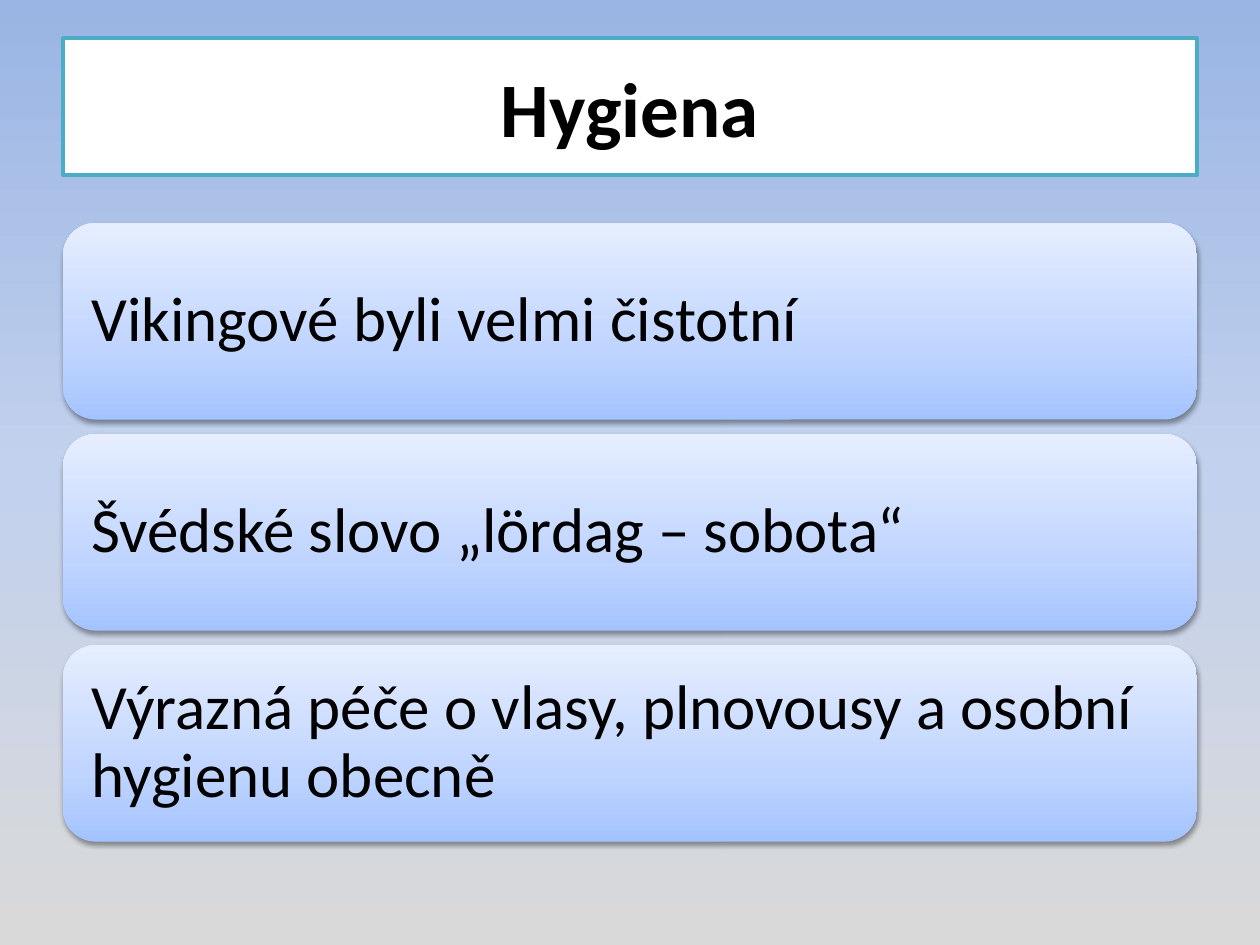
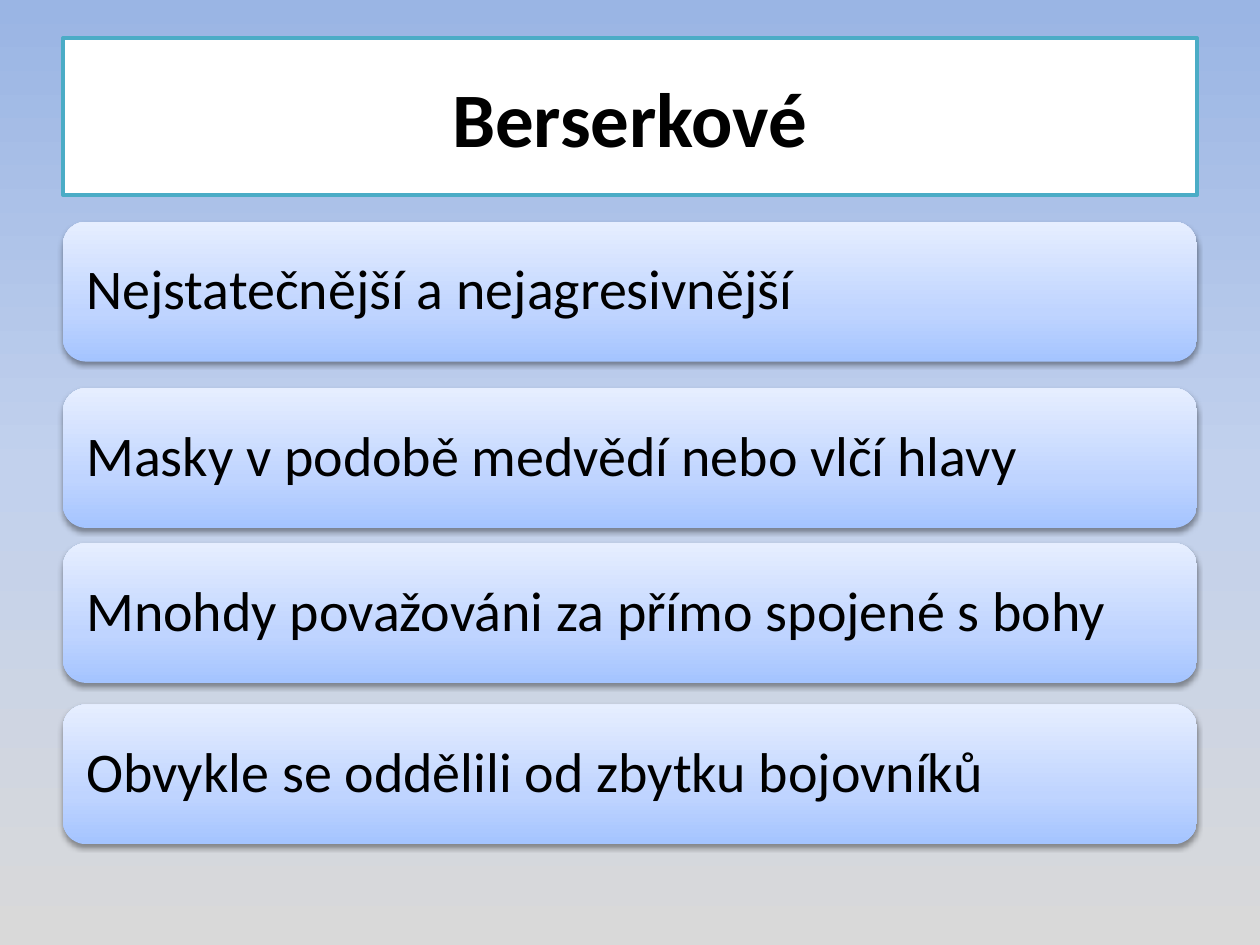
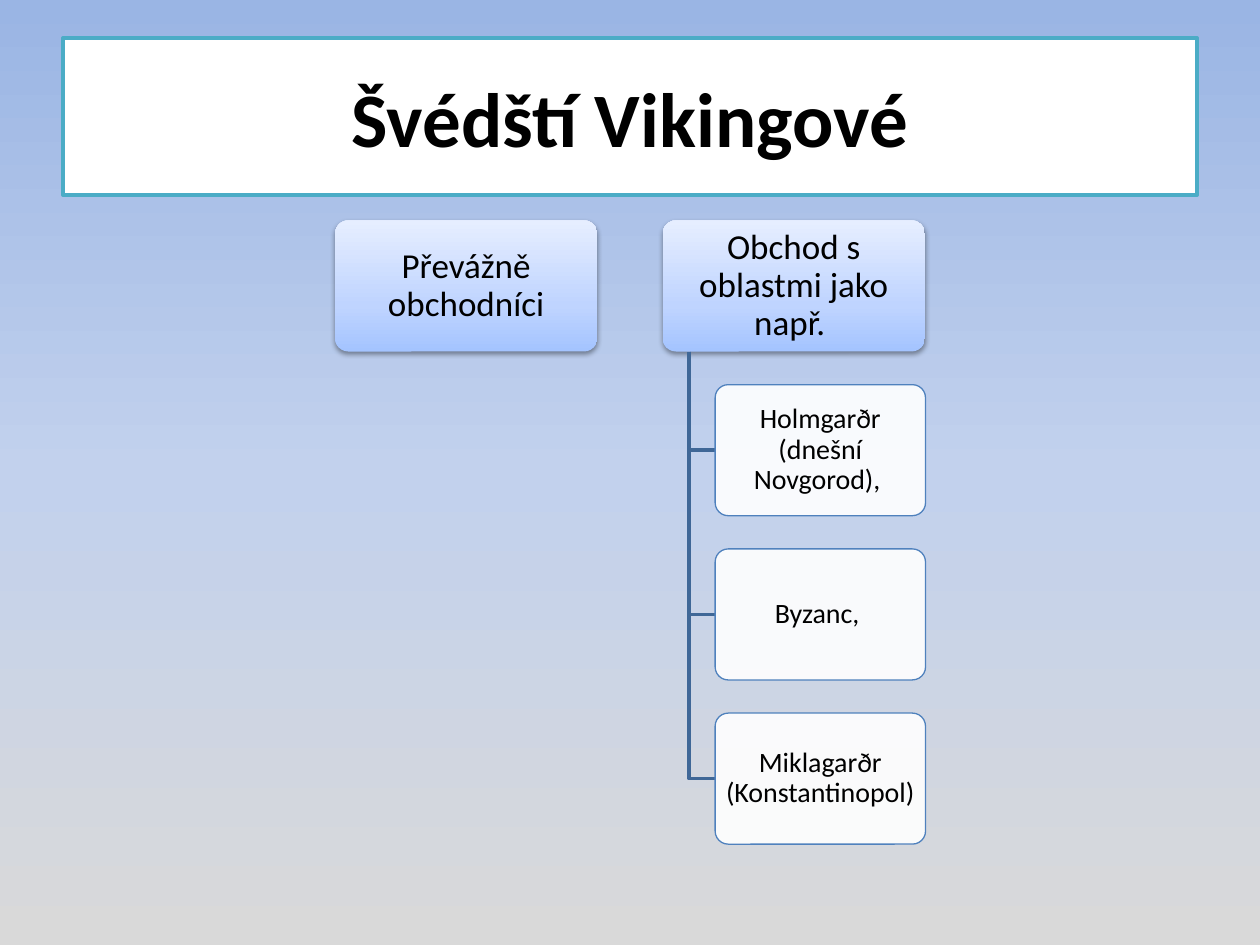
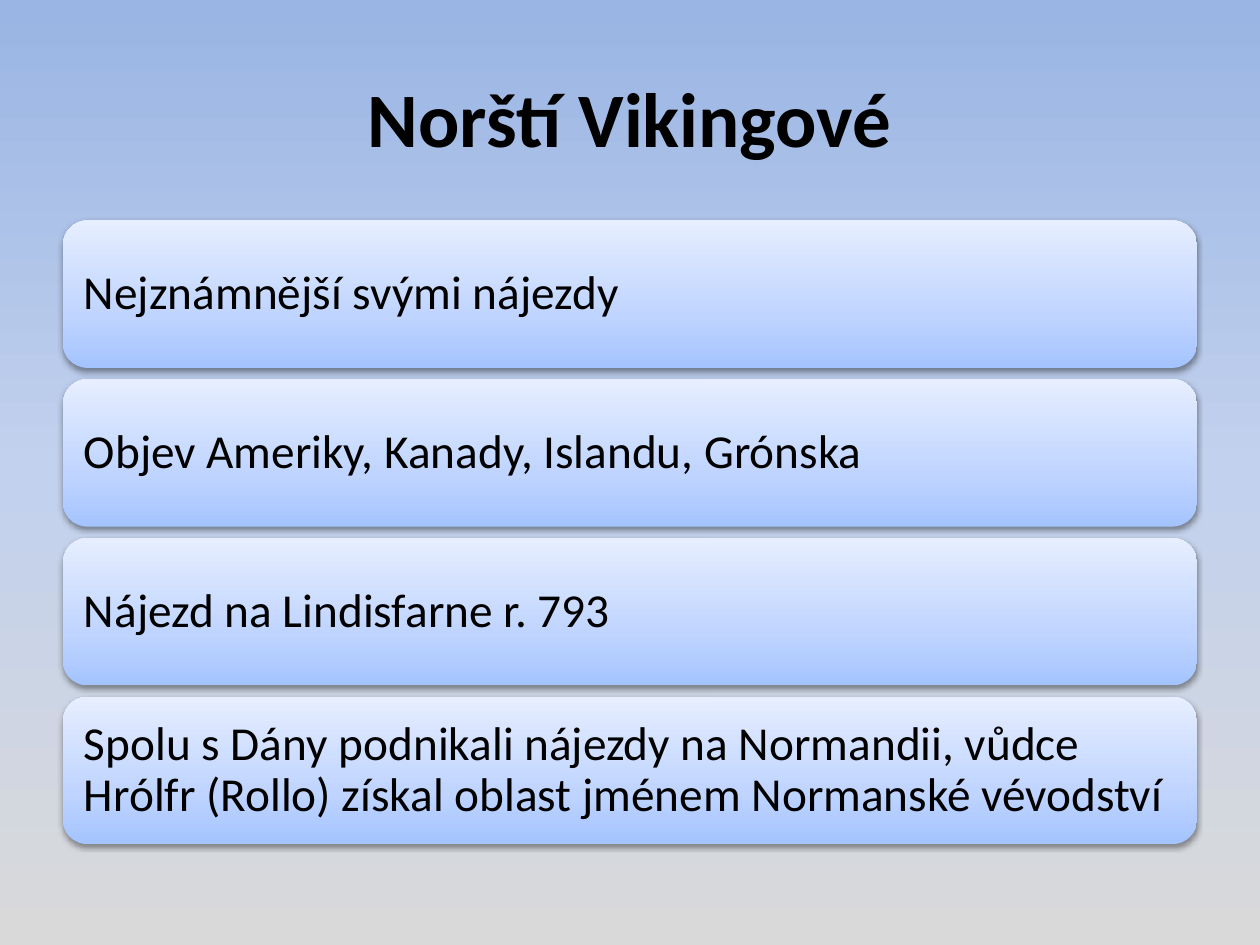
from lxml.etree import SubElement
from pptx import Presentation
from pptx.dml.color import RGBColor
from pptx.enum.shapes import MSO_SHAPE
from pptx.enum.text import MSO_ANCHOR, PP_ALIGN
from pptx.oxml.ns import qn
from pptx.util import Inches, Pt

FONT = "Calibri"
INK, WHITE = "000000", "FFFFFF"
TITLE_BORDER, LEAF_BORDER, BRANCH = "4BACC6", "4F81BD", "3F6797"
SKY = [(0, "9AB5E4"), (50, "C2D1ED"), (100, "D9D9D9")]
GLOSS = [(0, "A4C4FF"), (35, "BFD4FF"), (100, "E6EEFF")]

TITLE_ONLY = 5
MARGIN, CONTENT_WIDTH = 0.5, 9
TITLE_TOP, TITLE_HEIGHT = 0.3, 1.25
NODE_WIDTH, LEAF_WIDTH, NODE_HEIGHT = 2.08, 1.67, 1.04
NODE_ROUNDING = 0.1


def rgb(hex_string):
    return RGBColor.from_string(hex_string)


def evenly(first, last, count):
    step = (last - first) / (count - 1)
    return [first + step * i for i in range(count)]


def paint_gradient(fill, owner, stops, angle):
    """Fill with (percent, colour) stops; owner is the XML that holds the fill."""
    fill.gradient()
    fill.gradient_angle = angle
    stop_list = owner.find(".//" + qn("a:gsLst"))
    for old_stop in list(stop_list):
        stop_list.remove(old_stop)
    for percent, color in stops:
        stop = SubElement(stop_list, qn("a:gs"), pos=str(percent * 1000))
        SubElement(stop, qn("a:srgbClr"), val=color)


def set_border(shape, color, width):
    shape.line.color.rgb = rgb(color)
    shape.line.width = Pt(width)


def add_soft_shadow(shape):
    effects = shape.element.spPr.find(qn("a:effectLst"))
    shadow = SubElement(effects, qn("a:outerShdw"), blurRad=str(Pt(3.1)),
                        dist=str(Pt(1.6)), dir="5400000", rotWithShape="0")
    color = SubElement(shadow, qn("a:srgbClr"), val=INK)
    SubElement(color, qn("a:alpha"), val="38000")


def style_paragraph(paragraph, size, align, bold=False):
    paragraph.alignment = align
    paragraph.font.name = FONT
    paragraph.font.size = Pt(size)
    paragraph.font.bold = bold
    paragraph.font.color.rgb = rgb(INK)


def add_titled_slide(prs, heading, height=TITLE_HEIGHT, framed=True):
    slide = prs.slides.add_slide(prs.slide_layouts[TITLE_ONLY])
    title = slide.shapes.title
    title.left, title.top = Inches(MARGIN), Inches(TITLE_TOP)
    title.width, title.height = Inches(CONTENT_WIDTH), Inches(height)
    title.text_frame.text = heading
    title.text_frame.vertical_anchor = MSO_ANCHOR.MIDDLE
    style_paragraph(title.text_frame.paragraphs[0], 44, PP_ALIGN.CENTER, bold=True)
    if framed:
        title.fill.solid()
        title.fill.fore_color.rgb = rgb(WHITE)
        set_border(title, TITLE_BORDER, 2)
    return slide


def add_rounded_box(slide, text, box, size, insets, align):
    """Rounded box with text; insets are horizontal and vertical."""
    shape = slide.shapes.add_shape(MSO_SHAPE.ROUNDED_RECTANGLE, *map(Inches, box))
    shape.shadow.inherit = False
    frame = shape.text_frame
    frame.word_wrap = True
    frame.vertical_anchor = MSO_ANCHOR.MIDDLE
    frame.margin_left = frame.margin_right = Inches(insets[0])
    frame.margin_top = frame.margin_bottom = Inches(insets[1])
    frame.text = text
    style_paragraph(frame.paragraphs[0], size, align)
    frame.paragraphs[0].line_spacing = 0.9
    return shape


def add_glossy_box(slide, text, box, size, insets, align=PP_ALIGN.LEFT):
    shape = add_rounded_box(slide, text, box, size, insets, align)
    paint_gradient(shape.fill, shape.element.spPr, GLOSS, 90)
    shape.line.fill.background()
    add_soft_shadow(shape)
    return shape


def add_bars(slide, statements, tops, height, size, inset):
    for statement, top in zip(statements, tops):
        add_glossy_box(slide, statement, (MARGIN, top, CONTENT_WIDTH, height),
                       size, (inset, inset))


def add_node(slide, text, left, top):
    node = add_glossy_box(slide, text, (left, top, NODE_WIDTH, NODE_HEIGHT),
                          20, (0.04, 0.03), PP_ALIGN.CENTER)
    node.adjustments[0] = NODE_ROUNDING


def add_leaf(slide, text, left, top):
    leaf = add_rounded_box(slide, text, (left, top, LEAF_WIDTH, NODE_HEIGHT),
                           16, (0.03, 0.02), PP_ALIGN.CENTER)
    leaf.adjustments[0] = NODE_ROUNDING
    leaf.fill.solid()
    leaf.fill.fore_color.rgb = rgb(WHITE)
    white = leaf.element.spPr.find(qn("a:solidFill")).find(qn("a:srgbClr"))
    SubElement(white, qn("a:alpha"), val="90000")
    set_border(leaf, LEAF_BORDER, 0.75)


def add_branch(slide, trunk, start, leaf_left, leaf_middle):
    """Line down the trunk and across to a leaf."""
    builder = slide.shapes.build_freeform(Inches(trunk), Inches(start))
    builder.add_line_segments([(Inches(trunk), Inches(leaf_middle)),
                               (Inches(leaf_left), Inches(leaf_middle))], close=False)
    branch = builder.convert_to_shape()
    branch.shadow.inherit = False
    branch.fill.background()
    set_border(branch, BRANCH, 2)


def add_hierarchy(slide, roots, leaves):
    """Root nodes in a row, with the leaves hanging under the last one."""
    root_top, *leaf_tops = evenly(1.75, 5.66, len(leaves) + 1)
    root_lefts = evenly(2.66, 5.26, len(roots))
    for root, left in zip(roots, root_lefts):
        add_node(slide, root, left, root_top)
    trunk = root_lefts[-1] + NODE_WIDTH * 0.1
    leaf_left = root_lefts[-1] + NODE_WIDTH * 0.2
    for leaf, top in zip(leaves, leaf_tops):
        add_branch(slide, trunk, root_top + NODE_HEIGHT, leaf_left, top + NODE_HEIGHT / 2)
        add_leaf(slide, leaf, leaf_left, top)


def main():
    prs = Presentation()
    prs.slide_width, prs.slide_height = Inches(10), Inches(7.5)
    master = prs.slide_master
    paint_gradient(master.background.fill, master.element, SKY, 270)

    hygiene = add_titled_slide(prs, "Hygiena", height=1.09)
    add_bars(hygiene, [
        "Vikingové byli velmi čistotní",
        "Švédské slovo „lördag – sobota“",
        "Výrazná péče o vlasy, plnovousy a osobní hygienu obecně",
    ], evenly(1.77, 5.12, 3), height=1.56, size=36, inset=0.15)

    berserkers = add_titled_slide(prs, "Berserkové")
    add_bars(berserkers, [
        "Nejstatečnější a nejagresivnější",
        "Masky v podobě medvědí nebo vlčí hlavy",
        "Mnohdy považováni za přímo spojené s bohy",
        "Obvykle se oddělili od zbytku bojovníků",
    ], [1.76, 3.08, 4.31, 5.59], height=1.11, size=32, inset=0.13)

    swedes = add_titled_slide(prs, "Švédští Vikingové")
    add_hierarchy(swedes,
                  ["Převážně obchodníci", "Obchod s oblastmi jako např. "],
                  ["Holmgarðr (dnešní Novgorod), ", "Byzanc, ",
                   "Miklagarðr (Konstantinopol)"])

    norwegians = add_titled_slide(prs, "Norští Vikingové", framed=False)
    add_bars(norwegians, [
        "Nejznámnější svými nájezdy",
        "Objev Ameriky, Kanady, Islandu, Grónska",
        "Nájezd na Lindisfarne r. 793",
        "Spolu s Dány podnikali nájezdy na Normandii, vůdce Hrólfr (Rollo) "
        "získal oblast jménem Normanské vévodství",
    ], evenly(1.75, 5.53, 4), height=1.17, size=27, inset=0.11)

    prs.save("out.pptx")


if __name__ == "__main__":
    main()
